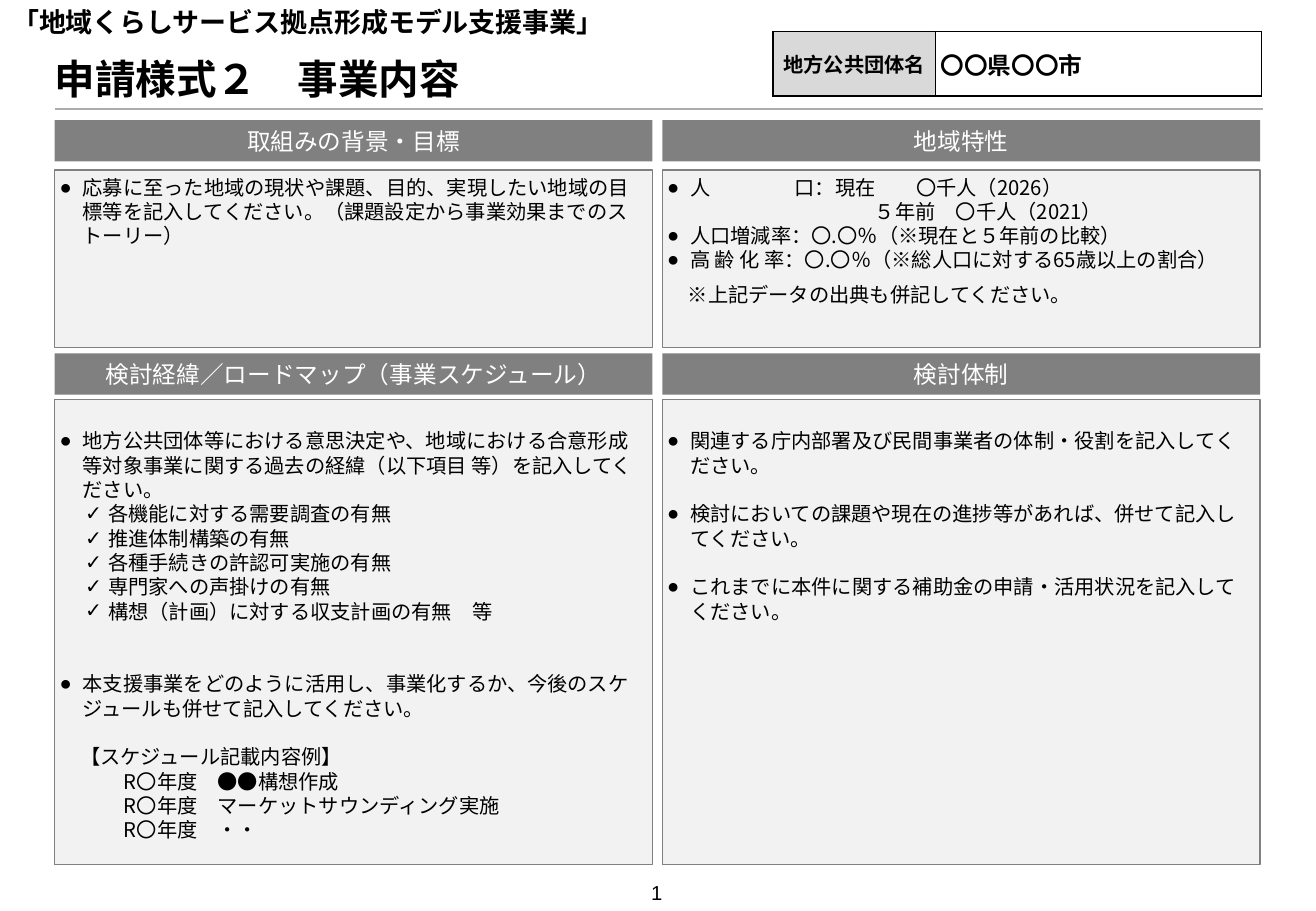
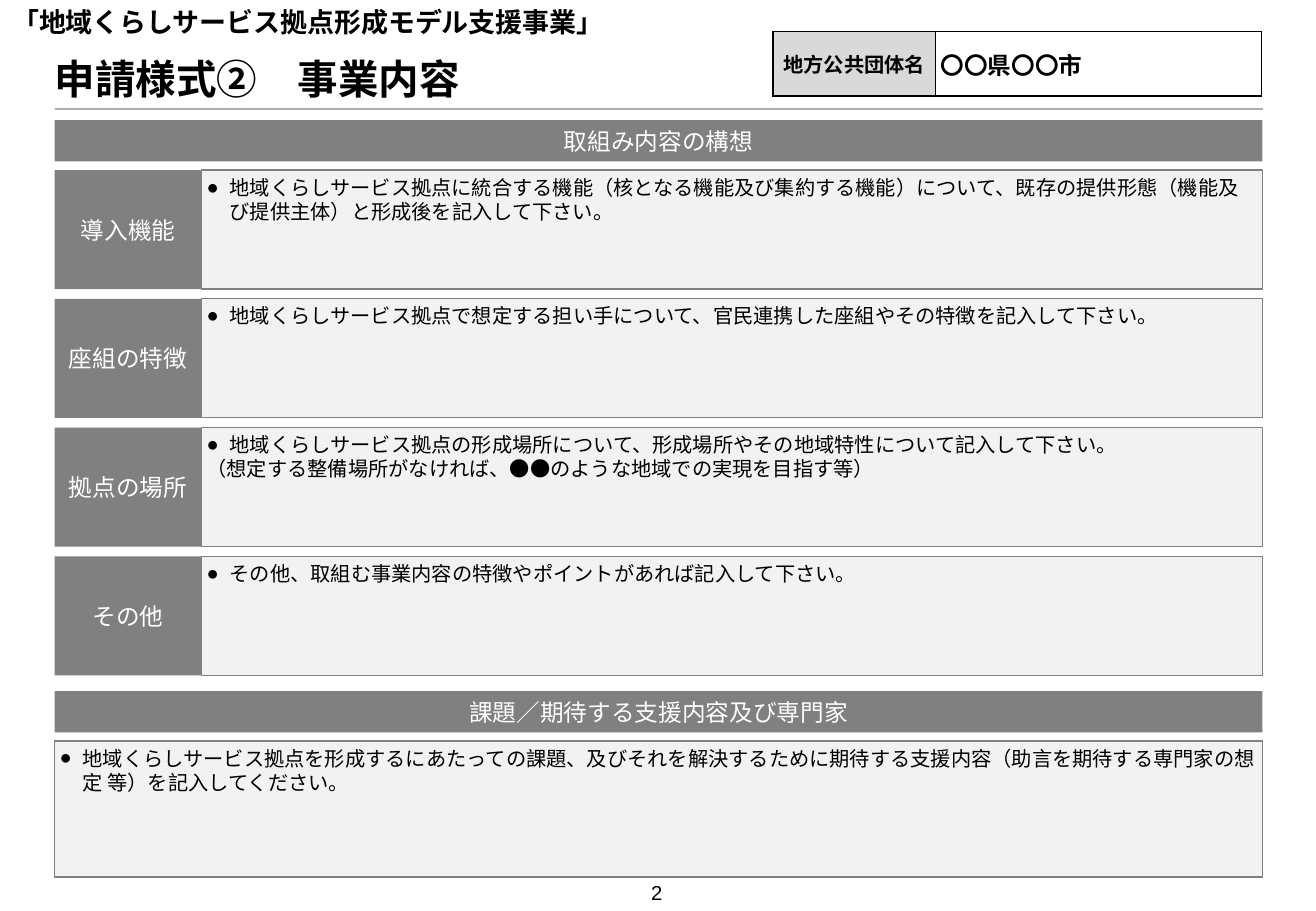
from lxml import etree
from pptx import Presentation
from pptx.dml.color import RGBColor
from pptx.enum.shapes import MSO_CONNECTOR, MSO_SHAPE
from pptx.enum.text import MSO_ANCHOR, PP_ALIGN
from pptx.oxml.ns import qn
from pptx.util import Inches, Pt

# Shared style
FONT = "Noto Sans CJK JP"
BLACK = RGBColor(0, 0, 0)
WHITE = RGBColor(255, 255, 255)
GRAY = RGBColor(0x80, 0x80, 0x80)
PALE = RGBColor(0xF2, 0xF2, 0xF2)
LABEL = RGBColor(0xD9, 0xD9, 0xD9)
RULE = RGBColor(0xAC, 0xAC, 0xAC)
LEFT, FULL, BAND = 0.45, 9.94, 0.34
LINE = 14.4  # body line pitch in points

# Paragraph kinds: left margin, first-line indent, bullet, tab stops
KINDS = {
    "dot": (0.19, -0.19, "●", ()),
    "data": (0.19, -0.19, "●", (1.05, 2.05)),
    "check": (0.4, -0.19, "✓", ()),
    "plain": (0, 0, None, ()),
    "note": (0.17, 0, None, ()),
    "year": (0.53, 0, None, ()),
    "past": (1.71, 0, None, ()),
}

# Content: paragraphs are kind, text, space before in points
HEAD = "「地域くらしサービス拠点形成モデル支援事業」"
NAME = ("地方公共団体名", "〇〇県〇〇市")
TITLES = ("申請様式２　事業内容", "申請様式②　事業内容")

GOAL = [("dot", "応募に至った地域の現状や課題、目的、実現したい地域の目標等を記入してください。"
                "（課題設定から事業効果までのストーリー）", 0)]
AREA = [
    ("data", "人\t口：現在\t〇千人（2026）", 0),
    ("past", "５年前　〇千人（2021）", 0),
    ("dot", "人口増減率：〇.〇％（※現在と５年前の比較）", 0),
    ("dot", "高 齢 化 率：〇.〇％（※総人口に対する65歳以上の割合）", 0),
    ("note", "※上記データの出典も併記してください。", 6),
]
ROAD = [
    ("dot", "地方公共団体等における意思決定や、地域における合意形成等対象事業に関する"
            "過去の経緯（以下項目 等）を記入してください。", 0),
    ("check", "各機能に対する需要調査の有無", 0),
    ("check", "推進体制構築の有無", 0),
    ("check", "各種手続きの許認可実施の有無", 0),
    ("check", "専門家への声掛けの有無", 0),
    ("check", "構想（計画）に対する収支計画の有無　等", 0),
    ("dot", "本支援事業をどのように活用し、事業化するか、今後のスケジュールも"
            "併せて記入してください。", 2 * LINE),
    ("note", "【スケジュール記載内容例】", LINE),
    ("year", "R〇年度　●●構想作成", 0),
    ("year", "R〇年度　マーケットサウンディング実施", 0),
    ("year", "R〇年度　・・", 0),
]
TEAM = [
    ("dot", "関連する庁内部署及び民間事業者の体制・役割を記入してください。", 0),
    ("dot", "検討においての課題や現在の進捗等があれば、併せて記入してください。", LINE),
    ("dot", "これまでに本件に関する補助金の申請・活用状況を記入してください。", LINE),
]
# Rows of slide 1: band top, body top, body height, top inset, cells
GRID = [
    (0.99, 1.4, 1.46, 0.04, [("取組みの背景・目標", GOAL), ("地域特性", AREA)]),
    (2.91, 3.29, 3.83, 0.24, [("検討経緯／ロードマップ（事業スケジュール）", ROAD),
                              ("検討体制", TEAM)]),
]
PLAN = "取組み内容の構想"
ITEMS = [
    ("導入機能", [("dot", "地域くらしサービス拠点に統合する機能（核となる機能及び集約する機能）について、"
                      "既存の提供形態（機能及び提供主体）と形成後を記入して下さい。", 0)]),
    ("座組の特徴", [("dot", "地域くらしサービス拠点で想定する担い手について、官民連携した座組や"
                       "その特徴を記入して下さい。", 0)]),
    ("拠点の場所", [("dot", "地域くらしサービス拠点の形成場所について、形成場所やその地域特性について"
                       "記入して下さい。", 0),
               ("plain", "（想定する整備場所がなければ、●●のような地域での実現を目指す等）", 0)]),
    ("その他", [("dot", "その他、取組む事業内容の特徴やポイントがあれば記入して下さい。", 0)]),
]
HELP = "課題／期待する支援内容及び専門家"
ASK = [("dot", "地域くらしサービス拠点を形成するにあたっての課題、及びそれを解決するために"
               "期待する支援内容（助言を期待する専門家の想定 等）を記入してください。", 0)]


def area(*sizes):
    return [Inches(n) for n in sizes]


def pad(frame, *sides):
    (frame.margin_left, frame.margin_top,
     frame.margin_right, frame.margin_bottom) = area(*sides)


def style(para, size, color=BLACK, bold=False, align=PP_ALIGN.LEFT):
    para.alignment = align
    for run in para.runs:
        font = run.font
        font.size, font.bold, font.name = Pt(size), bold, FONT
        font.color.rgb = color
        east = etree.Element(qn("a:ea"), typeface=FONT)
        run.font._element.find(qn("a:latin")).addnext(east)


def indent(para, kind):
    left, first, mark, stops = KINDS[kind]
    props = para._p.get_or_add_pPr()
    props.set("marL", str(Inches(left)))
    props.set("indent", str(Inches(first)))
    if mark:
        etree.SubElement(props, qn("a:buFont"), typeface="Arial")
        etree.SubElement(props, qn("a:buChar"), char=mark)
    if stops:
        tabs = etree.SubElement(props, qn("a:tabLst"))
        for stop in stops:
            etree.SubElement(tabs, qn("a:tab"), pos=str(Inches(stop)), algn="l")


def block(slide, x, y, w, h, fill):
    box = slide.shapes.add_shape(MSO_SHAPE.RECTANGLE, *area(x, y, w, h))
    box.shadow.inherit = False
    box.fill.solid()
    box.fill.fore_color.rgb = fill
    return box


def band(slide, x, y, w, h, text):
    box = block(slide, x, y, w, h, GRAY)
    box.line.fill.background()
    frame = box.text_frame
    pad(frame, 0.08, 0.08, 0.08, 0.08)
    frame.word_wrap = False
    frame.vertical_anchor = MSO_ANCHOR.MIDDLE
    frame.text = text
    style(frame.paragraphs[0], 14, WHITE, align=PP_ALIGN.CENTER)


def body(slide, x, y, w, h, paras, top=0.04):
    box = block(slide, x, y, w, h, PALE)
    box.line.color.rgb = GRAY
    box.line.width = Pt(0.75)
    frame = box.text_frame
    pad(frame, 0.04, top, 0.04, 0.04)
    frame.word_wrap = True
    frame.vertical_anchor = MSO_ANCHOR.TOP
    for i, (kind, text, gap) in enumerate(paras):
        para = frame.add_paragraph() if i else frame.paragraphs[0]
        para.text = text
        indent(para, kind)
        para.line_spacing = Pt(LINE)
        if gap:
            para.space_before = Pt(gap)
        style(para, 12)


def border(cell):
    props = cell._tc.get_or_add_tcPr()
    for i, side in enumerate(("lnL", "lnR", "lnT", "lnB")):
        edge = etree.Element(qn("a:" + side), w=str(Pt(1)))
        fill = etree.SubElement(edge, qn("a:solidFill"))
        etree.SubElement(fill, qn("a:srgbClr"), val=str(BLACK))
        props.insert(i, edge)


def name_table(slide):
    table = slide.shapes.add_table(1, 2, *area(6.36, 0.26, 4.02, 0.53)).table
    looks = [(1.34, 12, LABEL, PP_ALIGN.CENTER), (2.68, 14, WHITE, PP_ALIGN.LEFT)]
    for i, (wide, size, fill, align) in enumerate(looks):
        table.columns[i].width = Inches(wide)
        cell = table.cell(0, i)
        cell.text = NAME[i]
        pad(cell, 0.04, 0.04, 0.04, 0.04)
        cell.vertical_anchor = MSO_ANCHOR.MIDDLE
        cell.fill.solid()
        cell.fill.fore_color.rgb = fill
        border(cell)
        style(cell.text_frame.paragraphs[0], size, bold=True, align=align)


def number(slide):
    box = slide.shapes.add_textbox(*area(5.15, 7.21, 0.51, 0.28))
    box.text_frame.vertical_anchor = MSO_ANCHOR.MIDDLE
    para = box.text_frame.paragraphs[0]
    para.alignment = PP_ALIGN.CENTER
    field = etree.SubElement(para._p, qn("a:fld"), type="slidenum",
                             id="{B6F15528-21DE-4FAA-801E-634DDDAF4B2B}")
    props = etree.SubElement(field, qn("a:rPr"), lang="ja-JP", sz="1200")
    fill = etree.SubElement(props, qn("a:solidFill"))
    etree.SubElement(fill, qn("a:srgbClr"), val=str(BLACK))
    etree.SubElement(props, qn("a:latin"), typeface="Arial")
    etree.SubElement(field, qn("a:t")).text = str(len(deck.slides))


def rule(slide):
    line = slide.shapes.add_connector(
        MSO_CONNECTOR.STRAIGHT, *area(LEFT, 0.9, LEFT + FULL, 0.9))
    line.line.color.rgb = RULE
    line.line.width = Pt(1)
    etree.SubElement(line._element.spPr, qn("a:effectLst"))


def start(text):
    slide = deck.slides.add_slide(deck.slide_layouts[5])
    rule(slide)
    # Title placeholder
    title = slide.shapes.title
    title.left, title.top, title.width, title.height = area(LEFT, 0.38, FULL, 0.53)
    frame = title.text_frame
    frame.text = text
    frame.vertical_anchor = MSO_ANCHOR.MIDDLE
    pad(frame, 0, 0.05, 0.1, 0.05)
    style(frame.paragraphs[0], 24, bold=True)
    # Programme name above the title
    frame = slide.shapes.add_textbox(*area(0.1, 0, FULL, 0.3)).text_frame
    frame.word_wrap = True
    frame.text = HEAD
    pad(frame, 0, 0.05, 0.1, 0.05)
    frame.paragraphs[0].line_spacing = Pt(19.2)
    style(frame.paragraphs[0], 16, bold=True)
    name_table(slide)
    number(slide)
    return slide


deck = Presentation()
deck.slide_width, deck.slide_height = area(10.83, 7.5)

# Slide 1: two by two panels
slide = start(TITLES[0])
for head, top, tall, inset, cells in GRID:
    for col, (text, paras) in enumerate(cells):
        x = LEFT + col * 5
        band(slide, x, head, 4.92, BAND, text)
        body(slide, x, top, 4.92, tall, paras, inset)

# Slide 2: labelled rows, then the request panel
slide = start(TITLES[1])
SIDE = 1.21
band(slide, LEFT, 0.99, FULL, BAND, PLAN)
for row, (text, paras) in enumerate(ITEMS):
    y = 1.4 + row * 1.06
    band(slide, LEFT, y, SIDE, 0.98, text)
    body(slide, LEFT + SIDE, y, FULL - SIDE, 0.98, paras)
band(slide, LEFT, 5.69, FULL, BAND, HELP)
body(slide, LEFT, 6.1, FULL, 1.12, ASK)

deck.save("out.pptx")
